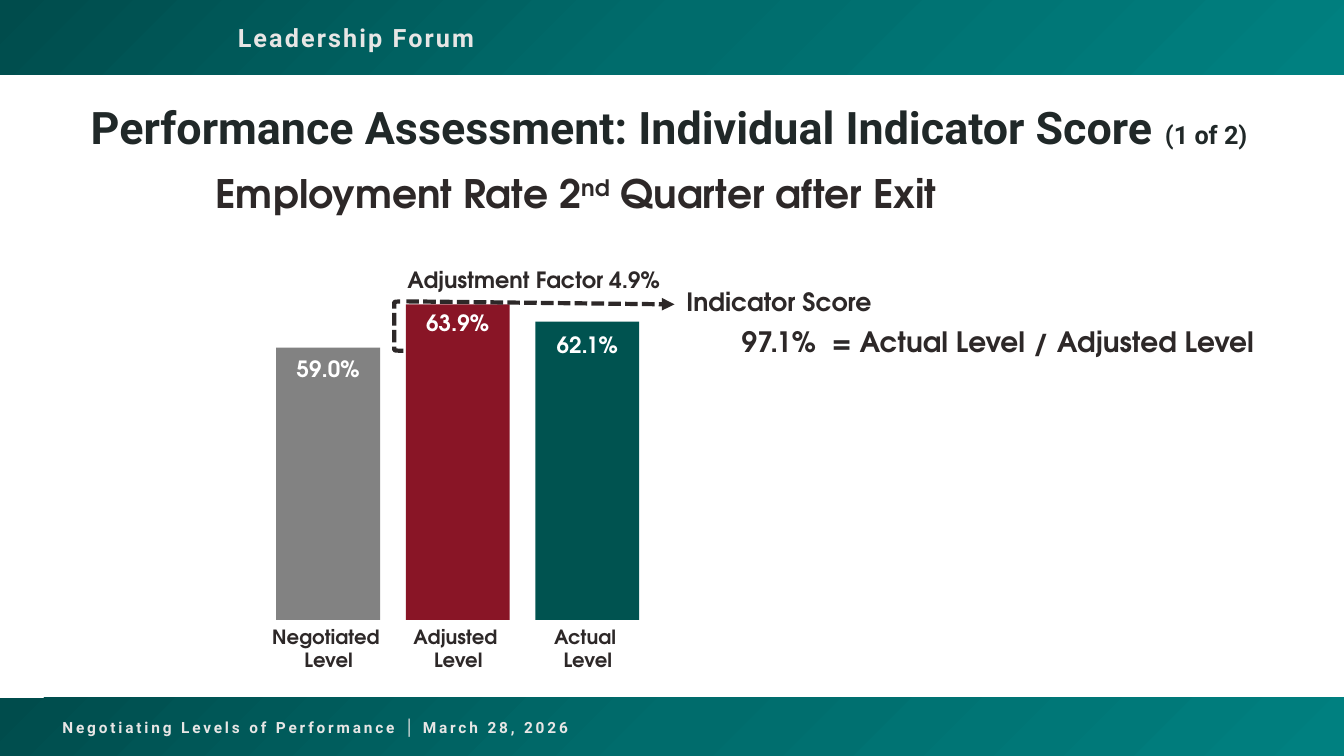
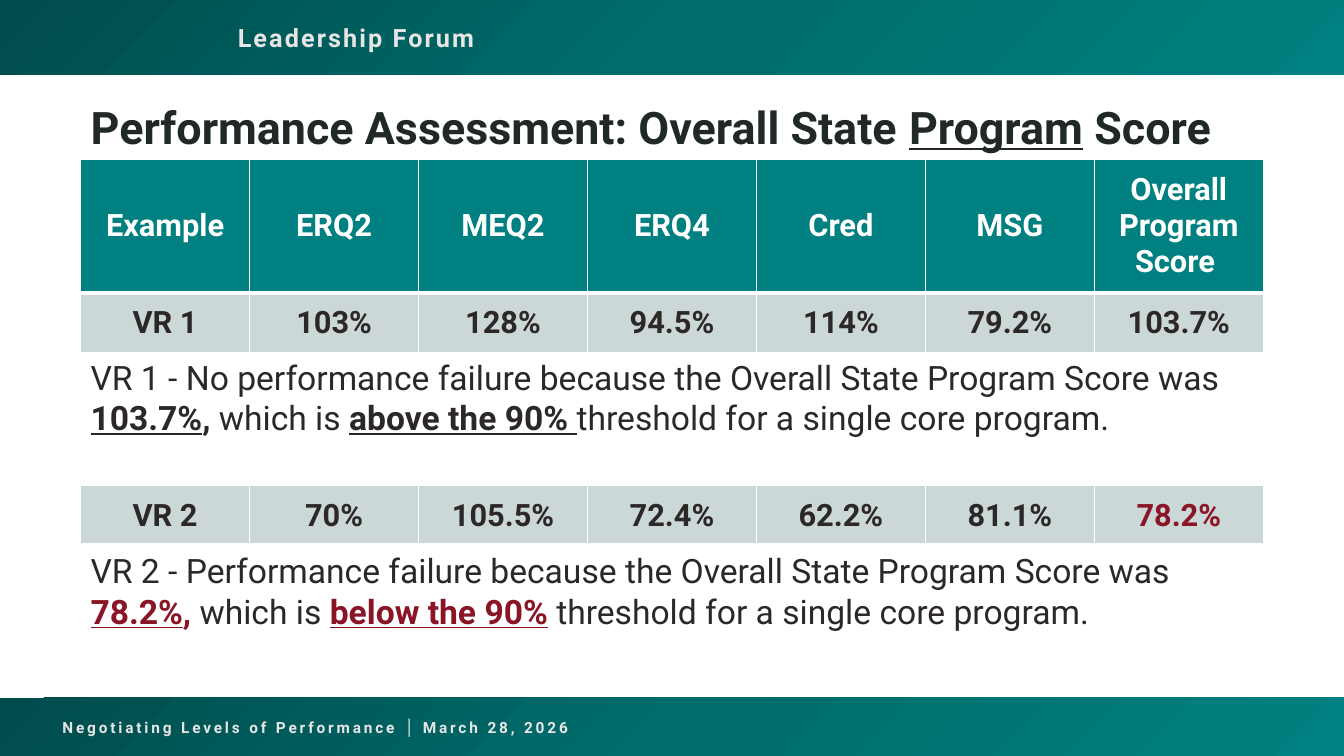
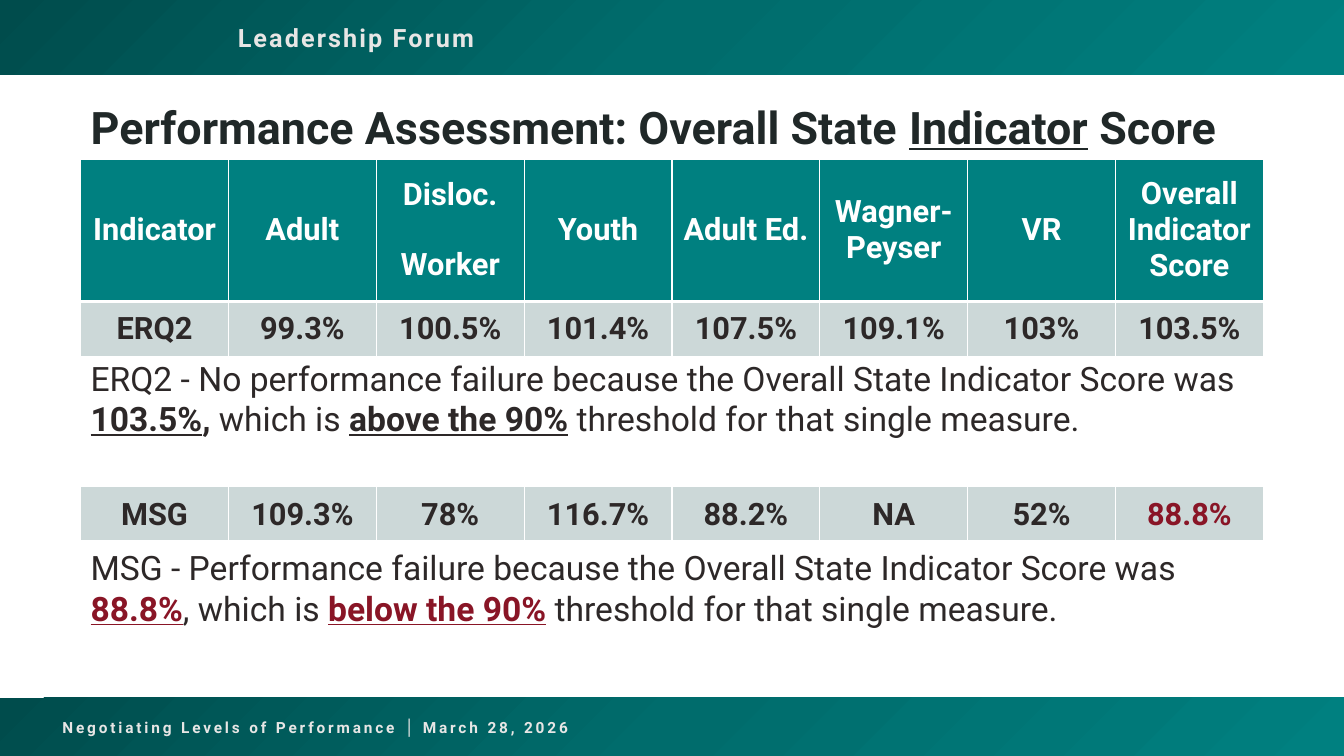
from copy import deepcopy

from lxml import etree
from pptx import Presentation
from pptx.dml.color import RGBColor
from pptx.enum.dml import MSO_LINE
from pptx.enum.shapes import MSO_CONNECTOR, MSO_SHAPE
from pptx.enum.text import MSO_ANCHOR, MSO_AUTO_SIZE, PP_ALIGN
from pptx.oxml.ns import qn
from pptx.util import Inches, Pt

LEFT, CENTER = PP_ALIGN.LEFT, PP_ALIGN.CENTER
MIDDLE, BOTTOM = MSO_ANCHOR.MIDDLE, MSO_ANCHOR.BOTTOM
FIT, FIXED = MSO_AUTO_SIZE.SHAPE_TO_FIT_TEXT, MSO_AUTO_SIZE.NONE
RECT, BRACKET = MSO_SHAPE.RECTANGLE, MSO_SHAPE.LEFT_BRACKET
STRAIGHT, DASH = MSO_CONNECTOR.STRAIGHT, MSO_LINE.SQUARE_DOT


class Theme:
    face, round = "Roboto", "TeX Gyre Adventor"
    ink, dark, pale, white = "2D2828", "202828", "E7E6E5", "FFFFFF"
    red, gray, green = "891526", "828282", "005350"
    head, cell = "008080", "CCD8D8"
    band = ("004C4C", "006C6C", "008080")
    title, count, brand, foot = 32, 18, 18, 11
    body, grid = 24, 22
    lead, score, rate, tag, name = 28, 20, 16, 16, 14


def put(para, text, size, color=Theme.ink, bold=True, under=False, face=Theme.face):
    run = para.add_run()
    run.text = text
    font = run.font
    font.name, font.size, font.bold, font.underline = face, Pt(size), bold, under
    font.color.rgb = RGBColor.from_string(color)
    return run


def box(slide, left, top, width, height, align=LEFT):
    shape = slide.shapes.add_textbox(Inches(left), Inches(top), Inches(width), Inches(height))
    frame = shape.text_frame
    frame.word_wrap, frame.auto_size = True, FIT
    frame.paragraphs[0].alignment = align
    return shape


deck = Presentation()
deck.slide_width, deck.slide_height = Inches(13.33), Inches(7.5)
layout = deck.slide_layouts[5]
for holder in list(layout.placeholders):
    if holder.placeholder_format.idx:
        holder.element.getparent().remove(holder.element)

titles = [
    [("Performance Assessment: Individual Indicator Score ", Theme.title, False),
     ("(1 of 2)", Theme.count, False)],
    [("Performance Assessment: Overall State ", Theme.title, False),
     ("Program", Theme.title, True), (" Score", Theme.title, False)],
    [("Performance Assessment: Overall State ", Theme.title, False),
     ("Indicator", Theme.title, True), (" Score", Theme.title, False)],
]
slides = []
for parts in titles:
    slide = deck.slides.add_slide(layout)
    slides.append(slide)
    title = slide.shapes.title
    title.left, title.top = Inches(0.8), Inches(1)
    title.width, title.height = Inches(11.73), Inches(0.58)
    frame = title.text_frame
    frame.word_wrap, frame.auto_size, frame.vertical_anchor = True, FIXED, BOTTOM
    para = frame.paragraphs[0]
    para.alignment, para.line_spacing = LEFT, 0.9
    for text, size, under in parts:
        put(para, text, size, Theme.dark, under=under)

first = slides[0]
shared = []
for top, height, spot, text, size, space in [
    (6.92, 0.58, (0.52, 7.07, 6.79, 0.29),
     "Negotiating Levels of Performance │ March 28, 2026", Theme.foot, 2),
    (0, 0.74, (2.26, 0.17, 5.89, 0.4), "Leadership Forum", Theme.brand, 1.5),
]:
    band = first.shapes.add_shape(RECT, 0, Inches(top), deck.slide_width, Inches(height))
    band.shadow.inherit = False
    band.line.fill.background()
    band.fill.gradient()
    band.fill.gradient_angle = 315
    stops = band.element.spPr.find(".//" + qn("a:gsLst"))
    stops.insert(1, deepcopy(stops[0]))
    for index, color in enumerate(Theme.band):
        stop = band.fill.gradient_stops[index]
        stop.position = index / 2
        stop.color.rgb = RGBColor.from_string(color)
    label = box(first, *spot)
    run = put(label.text_frame.paragraphs[0], text, size, Theme.pale)
    run.font._element.set("spc", str(int(space * 100)))
    shared += [band, label]
for shape in shared:
    layout.shapes.element.append(shape.element)

para = box(first, 1.83, 1.63, 7.77, 0.57, CENTER).text_frame.paragraphs[0]
for text, lift in [("Employment Rate 2", 0), ("nd", 30000), (" Quarter after Exit", 0)]:
    run = put(para, text, Theme.lead, face=Theme.round)
    if lift:
        run.font._element.set("baseline", str(lift))

base = 6.15
bars = [
    ("Negotiated ", "59.0%", 2.7, 0.02, Theme.gray),
    ("Adjusted ", "63.9%", 3.13, 0, Theme.red),
    ("Actual ", "62.1%", 2.96, 0.05, Theme.green),
]
for index, (name, rate, height, inset, color) in enumerate(bars):
    left, top = 2.74 + 1.285 * index, base - height
    bar = first.shapes.add_shape(RECT, Inches(left), Inches(top), Inches(1.03), Inches(height))
    bar.shadow.inherit = False
    bar.fill.solid()
    bar.fill.fore_color.rgb = RGBColor.from_string(color)
    bar.line.fill.background()
    frame = box(first, left - 0.22, base, 1.48, 0.57, CENTER).text_frame
    put(frame.paragraphs[0], name, Theme.name, face=Theme.round)
    para = frame.add_paragraph()
    para.alignment = CENTER
    put(para, "Level", Theme.name, face=Theme.round)
    para = box(first, left, top + inset, 1.03, 0.37, CENTER).text_frame.paragraphs[0]
    put(para, rate, Theme.rate, Theme.white, face=Theme.round)

para = box(first, 3.91, 2.59, 2.77, 0.37, CENTER).text_frame.paragraphs[0]
put(para, "Adjustment Factor 4.9%", Theme.tag, face=Theme.round)

brace = first.shapes.add_shape(BRACKET, Inches(3.91), Inches(2.99), Inches(0.09), Inches(0.49))
brace.shadow.inherit = False
brace.fill.background()
arrow = first.shapes.add_connector(
    STRAIGHT, Inches(4.03), Inches(2.99), Inches(6.69), Inches(3.02))
for shape in (brace, arrow):
    shape.line.color.rgb = RGBColor.from_string(Theme.ink)
    shape.line.width, shape.line.dash_style = Pt(3), DASH
props = arrow.element.spPr
etree.SubElement(props.find(qn("a:ln")), qn("a:tailEnd"), type="triangle")
etree.SubElement(props, qn("a:effectLst"))

frame = box(first, 6.69, 2.79, 2.07, 0.82, CENTER).text_frame
put(frame.paragraphs[0], "Indicator Score", Theme.count, face=Theme.round)
para = frame.add_paragraph()
para.alignment, para.space_before = CENTER, Pt(6)
put(para, "97.1%", Theme.score, face=Theme.round)
para = box(first, 8.15, 3.17, 4.46, 0.44).text_frame.paragraphs[0]
put(para, "= Actual Level / Adjusted Level", Theme.score, face=Theme.round)

panels = [
    (slides[1], 1.58, [1.33, 0.59], 0, Theme.ink,
     [["Example", "ERQ2", "MEQ2", "ERQ4", "Cred", "MSG", "Overall Program|Score "],
      ["VR 1", "103%", "128%", "94.5%", "114%", "79.2%", "103.7%"]],
     3.49,
     [("VR 1 - No performance failure because the Overall State Program Score was ", ""),
      ("103.7%", "bu"), (", ", "b"), ("which is ", ""), ("above the 90% ", "bu"),
      ("threshold for a single core program.", "")]),
    (slides[1], 4.82, [0.59], 0, Theme.red,
     [["VR 2", "70%", "105.5%", "72.4%", "62.2%", "81.1%", "78.2%"]],
     5.41,
     [("VR 2 - Performance failure because the Overall State Program Score was ", ""),
      ("78.2%", "bu"), (", ", "b"), ("which is ", ""), ("below the 90%", "bu"),
      (" threshold for a single core program.", "")]),
    (slides[2], 1.58, [1.41, 0.55], 24, Theme.ink,
     [["Indicator", "Adult", "Disloc.|Worker", "Youth", "Adult Ed.", "Wagner-Peyser", "VR",
       "Overall Indicator Score"],
      ["ERQ2", "99.3%", "100.5%", "101.4%", "107.5%", "109.1%", "103%", "103.5%"]],
     3.5,
     [("ERQ2 - No performance failure because the Overall State Indicator Score was ", ""),
      ("103.5%", "bu"), (", ", "b"), ("which is ", ""), ("above the 90%", "bu"),
      (" threshold for that single measure.", "")]),
    (slides[2], 4.83, [0.55], 0, Theme.red,
     [["MSG", "109.3%", "78%", "116.7%", "88.2%", "NA", "52%", "88.8%"]],
     5.38,
     [("MSG - Performance failure because the Overall State Indicator Score was ", ""),
      ("88.8%", "bu"), (", which is ", ""), ("below the 90%", "bu"),
      (" threshold for that single measure.", "")]),
]
for slide, top, heights, gap, tone, rows, below, note in panels:
    count = len(rows[0])
    table = slide.shapes.add_table(
        len(rows), count, Inches(0.8), Inches(top), Inches(11.73), Inches(sum(heights))).table
    table.first_row = table.horz_banding = False
    for column in table.columns:
        column.width = Inches(11.73 / count)
    for y, (height, row) in enumerate(zip(heights, rows)):
        table.rows[y].height = Inches(height)
        head = len(rows) == 2 and y == 0
        for x, text in enumerate(row):
            cell = table.cell(y, x)
            cell.vertical_anchor = MIDDLE
            cell.fill.solid()
            cell.fill.fore_color.rgb = RGBColor.from_string(Theme.head if head else Theme.cell)
            color = Theme.white if head else tone if x == count - 1 else Theme.ink
            frame = cell.text_frame
            for index, line in enumerate(text.split("|")):
                para = frame.add_paragraph() if index else frame.paragraphs[0]
                para.alignment = CENTER
                if index:
                    para.space_before = Pt(gap)
                put(para, line, Theme.grid, color)
            props = cell._tc.get_or_add_tcPr()
            widths = {"L": 1, "R": 1, "T": 3 if y else 1, "B": 1 if y else 3}
            for index, (side, width) in enumerate(widths.items()):
                edge = etree.Element(qn("a:ln" + side), w=str(Pt(width)))
                fill = etree.SubElement(edge, qn("a:solidFill"))
                etree.SubElement(fill, qn("a:srgbClr"), val=Theme.white)
                props.insert(index, edge)
    para = box(slide, 0.8, below, 11.73, 0.91).text_frame.paragraphs[0]
    for text, style in note:
        put(para, text, Theme.body, tone if style else Theme.ink, "b" in style, "u" in style)

deck.save("out.pptx")
